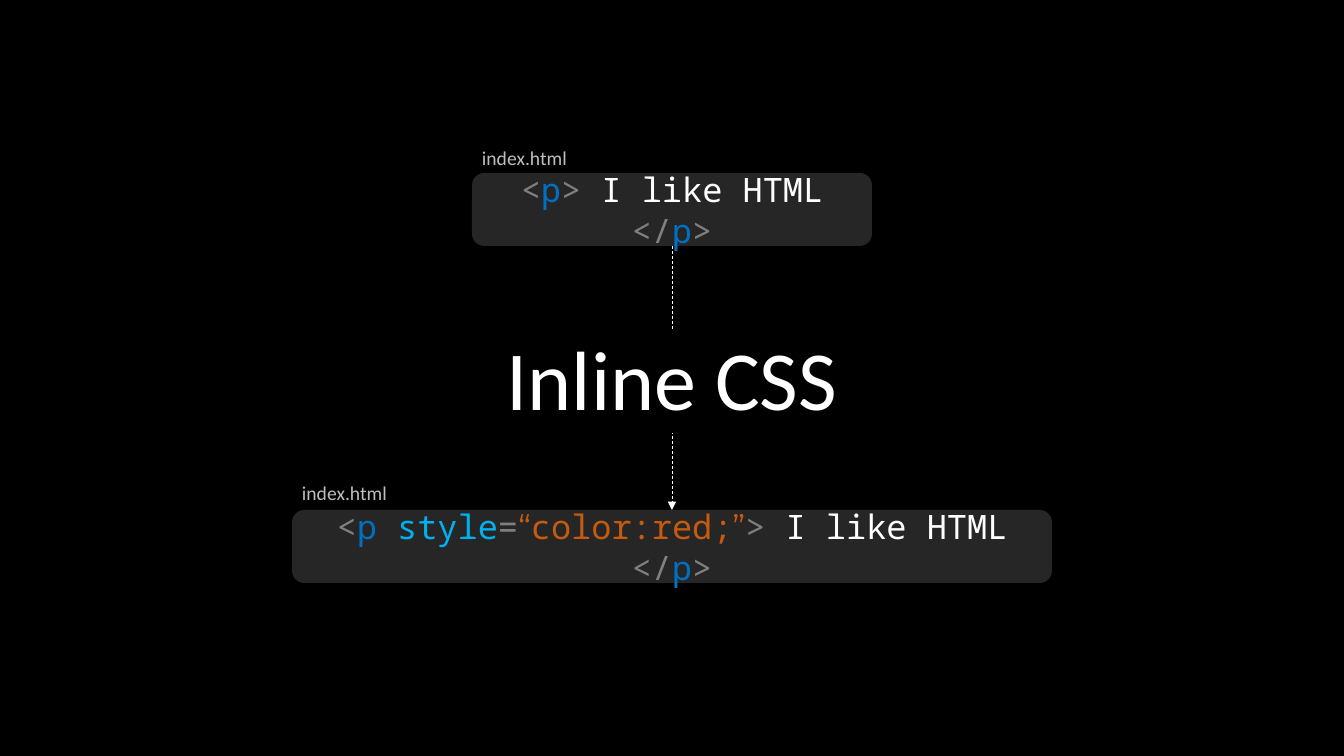
from pptx import Presentation
from pptx.dml.color import RGBColor as Rgb
from pptx.enum.dml import MSO_LINE as Dash
from pptx.enum.shapes import MSO_CONNECTOR as Link, MSO_SHAPE as Form
from pptx.enum.text import MSO_ANCHOR as Anchor, MSO_AUTO_SIZE as Fit, PP_ALIGN as Align
from pptx.oxml.ns import qn
from pptx.util import Pt
from lxml.etree import SubElement as Sub

WIDE, HIGH = 1344, 756
SCALE = 12192000 / WIDE
MID = WIDE // 2
CARD_H = 73
TOP_Y, LOW_Y = 173, 510

COLORS = {
    "back": "000000", "text": "FFFFFF", "card": "262626", "label": "BFBFBF",
    "mark": "808080", "tag": "0070C0", "attr": "00B0F0", "value": "C55A11",
}
SANS, MONO, QUOTE = "Calibri", "Noto Sans Mono", "Montserrat"


def px(*nums):
    return [round(n * SCALE) for n in nums]


class Deck:
    def __init__(self):
        self.prs = Presentation()
        self.prs.slide_width, self.prs.slide_height = px(WIDE, HIGH)
        self.slide = self.prs.slides.add_slide(self.prs.slide_layouts[5])
        self.shapes = self.slide.shapes
        self.paint(self.slide.background.fill, "back")

    def paint(self, fill, color):
        fill.solid()
        fill.fore_color.rgb = Rgb.from_string(COLORS[color])

    def style(self, run, size, color, face=SANS):
        run.font.size = Pt(size)
        run.font.name = face
        self.paint(run.font.fill, color)

    def title(self, text, x, y, w, h):
        box = self.shapes.title
        box.left, box.top, box.width, box.height = px(x, y, w, h)
        frame = box.text_frame
        frame.text = text
        frame.auto_size = Fit.NONE
        frame.vertical_anchor = Anchor.MIDDLE
        para = frame.paragraphs[0]
        para.alignment = Align.CENTER
        para.line_spacing = 0.9
        para.space_before = Pt(10)
        run = para.runs[0]
        self.style(run, 60, "text")
        # The black highlight breaks the arrow behind the words
        props = run.font.fill._xPr
        mark = Sub(props, qn("a:highlight"))
        Sub(mark, qn("a:srgbClr"), val=COLORS["back"])
        props.find(qn("a:solidFill")).addnext(mark)

    def arrow(self, x, y1, y2):
        line = self.shapes.add_connector(Link.STRAIGHT, *px(x, y1, x, y2))
        self.paint(line.line.fill, "text")
        line.line.width = Pt(0.5)
        line.line.dash_style = Dash.DASH
        Sub(line.line._get_or_add_ln(), qn("a:tailEnd"), type="triangle")
        Sub(line.element.spPr, qn("a:effectLst"))
        # Send behind the title
        self.shapes.title.element.addprevious(line.element)

    def card(self, y, w, code):
        box = self.shapes.add_shape(Form.ROUNDED_RECTANGLE, *px(MID - w // 2, y, w, CARD_H))
        box.shadow.inherit = False
        self.paint(box.fill, "card")
        box.line.fill.background()
        frame = box.text_frame
        frame.word_wrap = True
        frame.vertical_anchor = Anchor.MIDDLE
        para = frame.paragraphs[0]
        para.alignment = Align.CENTER
        for text, color in code:
            run = para.add_run()
            run.text = text
            self.style(run, 24, color, QUOTE if text in "“”" else MONO)

    def label(self, text, x, y):
        box = self.shapes.add_textbox(*px(x, y, 308, 34))
        frame = box.text_frame
        frame.text = text
        frame.word_wrap = True
        frame.auto_size = Fit.SHAPE_TO_FIT_TEXT
        self.style(frame.paragraphs[0].runs[0], 14, "label")


def main():
    deck = Deck()

    # Heading and the arrow through it
    deck.title("Inline CSS", 15, 320, 1314, 126)
    deck.arrow(MID, TOP_Y + CARD_H, LOW_Y)

    # Code before and after the style is added
    tail = [(">", "mark"), (" I like HTML ", "text"),
            ("</", "mark"), ("p", "tag"), (">", "mark")]
    plain = [("<", "mark"), ("p", "tag")]
    styled = [("<", "mark"), ("p ", "tag"), ("style", "attr"), ("=", "mark"),
              ("“", "value"), ("color:red;", "value"), ("”", "value")]
    for y, w, head, name_y in ((TOP_Y, 400, plain, 141), (LOW_Y, 760, styled, 476)):
        deck.card(y, w, head + tail)
        deck.label("index.html", MID - w // 2, name_y)

    deck.prs.save("out.pptx")


if __name__ == "__main__":
    main()
